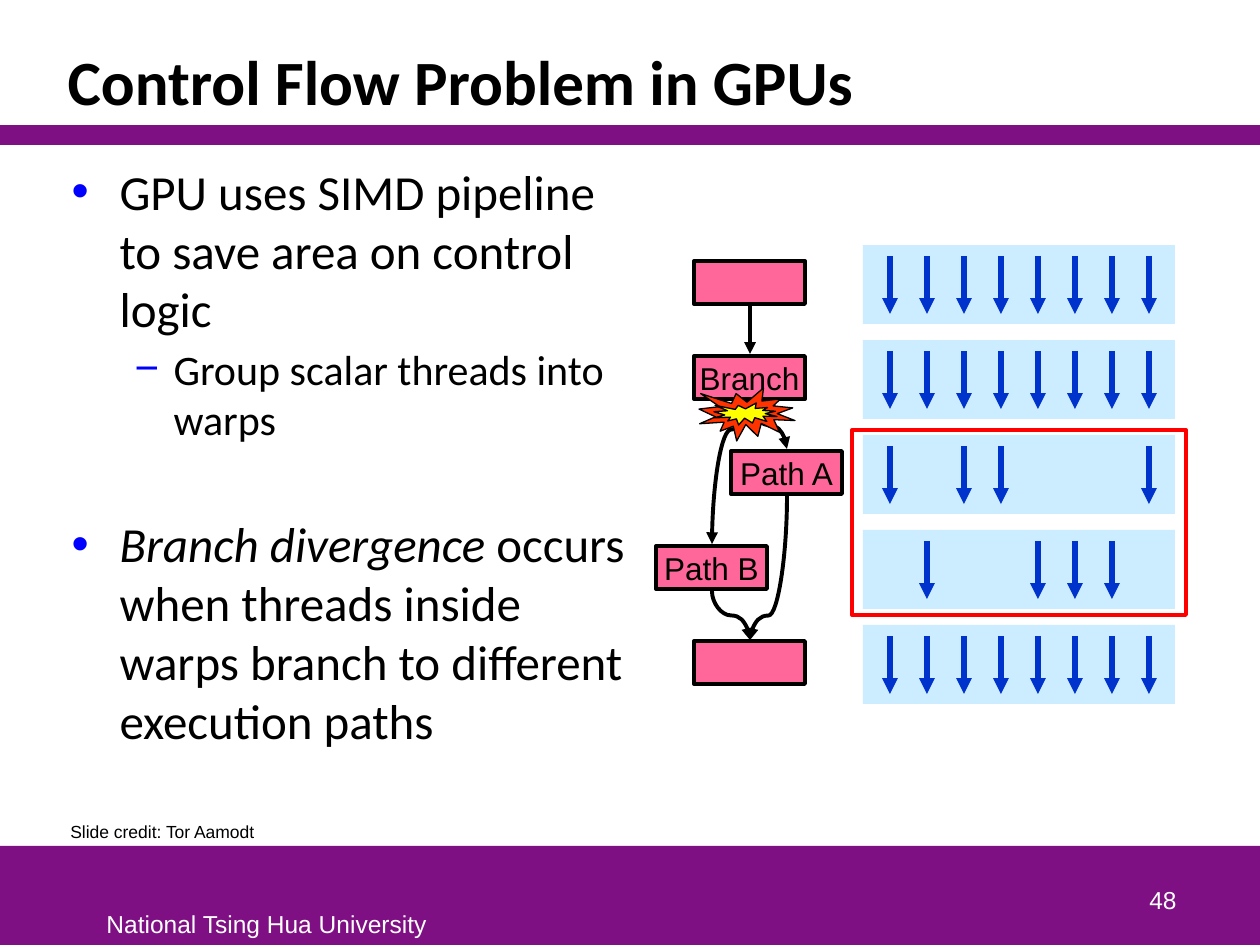
from lxml.etree import SubElement
from pptx import Presentation
from pptx.dml.color import RGBColor
from pptx.enum.shapes import MSO_CONNECTOR as Line, MSO_SHAPE as Shape
from pptx.enum.text import MSO_ANCHOR as Anchor, MSO_AUTO_SIZE as AutoSize, PP_ALIGN as Align
from pptx.oxml.ns import qn
from pptx.util import Emu, Pt

PX = 914400 / 126
COLORS = {
    "purple": "7F1084", "white": "FFFFFF", "black": "000000", "bullet": "0000FF",
    "warp": "CCECFF", "thread": "0033CC", "frame": "FF0000", "block": "FF6699",
    "burst": "FF3300", "spark": "FFFF00",
}


def write(paragraph, text, size, font="Arial", color="black", bold=False, italic=False):
    run = paragraph.add_run()
    run.text = text
    run.font.size, run.font.name = Pt(size), font
    run.font.bold, run.font.italic = bold, italic
    run.font.color.rgb = RGBColor.from_string(COLORS[color])


def draw(box, fill=None, line=None, width=2.25, preset=Shape.RECTANGLE):
    shape = slide.shapes.add_shape(preset, *[Emu(round(v * PX)) for v in box])
    shape.shadow.inherit = False
    if fill:
        shape.fill.solid()
        shape.fill.fore_color.rgb = RGBColor.from_string(COLORS[fill])
    else:
        shape.fill.background()
    if line:
        shape.line.color.rgb = RGBColor.from_string(COLORS[line])
        shape.line.width = Pt(width)
    else:
        shape.line.fill.background()
    return shape


deck = Presentation()
deck.slide_width, deck.slide_height = Emu(round(1260 * PX)), Emu(round(945 * PX))
slide = deck.slides.add_slide(deck.slide_layouts[1])
title, body = slide.shapes.title, slide.placeholders[1]

# Purple bands
draw((0, 846, 1260, 99), "purple")
draw((0, 125, 1260, 20), "purple")

# Title and bullet list
for holder, box in ((title, (55, 31, 1130, 94)), (body, (59, 155, 590, 684))):
    holder.left, holder.top, holder.width, holder.height = [Emu(round(v * PX)) for v in box]
    holder.text_frame.word_wrap = True
    holder.text_frame.auto_size = AutoSize.NONE
title.text_frame.vertical_anchor = Anchor.BOTTOM
heading = title.text_frame.paragraphs[0]
heading.alignment, heading.line_spacing = Align.LEFT, 0.85
write(heading, "Control Flow Problem in GPUs", 36, "Calibri", bold=True)

body.text_frame.vertical_anchor = Anchor.TOP
# level, size, space before, indent, hanging, bullet, (text, italic) parts
points = [
    (0, 28, 0, 48, 48, "•", [("GPU uses SIMD pipeline to save area on control logic", False)]),
    (1, 24, 3, 102, 39, "−", [("Group scalar threads into warps", False)]),
    (0, 28, 40, 48, 48, "•", [
        ("Branch divergence ", True),
        ("occurs when threads inside warps branch to different execution paths", False)]),
]
for number, (level, size, gap, indent, hanging, mark, parts) in enumerate(points):
    point = body.text_frame.add_paragraph() if number else body.text_frame.paragraphs[0]
    point.level, point.space_before = level, Pt(gap)
    properties = point._p.get_or_add_pPr()
    properties.set("marL", str(round(indent * PX)))
    properties.set("indent", str(round(-hanging * PX)))
    mark_color = SubElement(properties, qn("a:buClr"))
    SubElement(mark_color, qn("a:srgbClr"), val=COLORS["bullet"])
    SubElement(properties, qn("a:buChar"), char=mark)
    for text, italic in parts:
        write(point, text, size, "Calibri", italic=italic)

# Footer, page number and credit
labels = [
    ("National Tsing Hua University", (94, 903, 348, 42), 14, "white", Align.LEFT, Anchor.TOP),
    ("48", (927, 858, 262, 63), 14, "white", Align.RIGHT, Anchor.BOTTOM),
    ("Slide credit: Tor Aamodt", (58, 815, 213, 34), 10, "black", Align.LEFT, Anchor.TOP),
]
for text, box, size, color, align, anchor in labels:
    label = slide.shapes.add_textbox(*[Emu(round(v * PX)) for v in box]).text_frame
    label.word_wrap = True
    label.vertical_anchor = anchor
    label.paragraphs[0].alignment = align
    write(label.paragraphs[0], text, size, color=color)

# Warps, one row per step; X marks an active thread
PITCH = 95
arrows = []  # start, end, color, width, bend of a curve
for row, mask in enumerate(("XXXXXXXX", "XXXXXXXX", "X.XX...X", ".X..XXX.", "XXXXXXXX")):
    top = 245 + PITCH * row
    draw((863, top, 312, 79), "warp")
    for lane, state in enumerate(mask):
        if state == "X":
            x = 890 + 37 * lane
            arrows.append(((x, top + 11), (x, top + 69), "thread", 3, None))
draw((852, 430, 334, 185), line="frame")

# Control flow between the blocks
MIDDLE, PATH_A, PATH_B = 750, 787, 712
for start, end, bend in [
    ((MIDDLE, 305), (MIDDLE, 354), None),
    ((MIDDLE, 401), (PATH_B, 544), 0.2),
    ((MIDDLE, 401), (PATH_A, 449), 0.5),
    ((PATH_A, 496), (MIDDLE, 640), 0.83),
    ((PATH_B, 591), (MIDDLE, 640), 0.5),
]:
    arrows.append((start, end, "black", 2.25, bend))

for (x1, y1), (x2, y2), color, width, bend in arrows:
    kind = Line.CURVE if bend else Line.STRAIGHT
    arrow = slide.shapes.add_connector(kind, *[Emu(round(v * PX)) for v in (x1, y1, x2, y2)])
    arrow.line.color.rgb = RGBColor.from_string(COLORS[color])
    arrow.line.width = Pt(width)
    SubElement(arrow.line._get_or_add_ln(), qn("a:tailEnd"), type="triangle")
    shape_properties = arrow._element.spPr
    SubElement(shape_properties, qn("a:effectLst"))
    if bend:
        # Turn the curve so that it leaves and arrives vertically
        across, down = abs(x2 - x1), y2 - y1
        arrow.left = Emu(round(((x1 + x2) - down) / 2 * PX))
        arrow.top = Emu(round(((y1 + y2) - across) / 2 * PX))
        arrow.width, arrow.height = Emu(round(down * PX)), Emu(round(across * PX))
        turn = shape_properties.find(qn("a:xfrm"))
        turn.set("rot", str((270 if x2 > x1 else 90) * 60000))
        turn.set("flipH", "1" if x2 > x1 else "0")
        guides = shape_properties.find(qn("a:prstGeom")).find(qn("a:avLst"))
        SubElement(guides, qn("a:gd"), name="adj1", fmla=f"val {round(bend * 100000)}")

# Program blocks
blocks = [(MIDDLE, ""), (MIDDLE, "Branch"), (PATH_A, "Path A"), (PATH_B, "Path B"), (MIDDLE, "")]
for row, (center, text) in enumerate(blocks):
    block = draw((center - 56, 261 + PITCH * row, 111, 43), "block", "black")
    if text:
        block.text_frame.word_wrap = False
        block.text_frame.vertical_anchor = Anchor.MIDDLE
        block.text_frame.paragraphs[0].alignment = Align.CENTER
        write(block.text_frame.paragraphs[0], text, 18)

# Burst at the divergence
draw((699, 388, 96, 53), "burst", "black", 0.75, Shape.EXPLOSION1)
draw((714, 403, 63, 22), "spark", "black", 0.75, Shape.EXPLOSION1)

deck.save("out.pptx")
